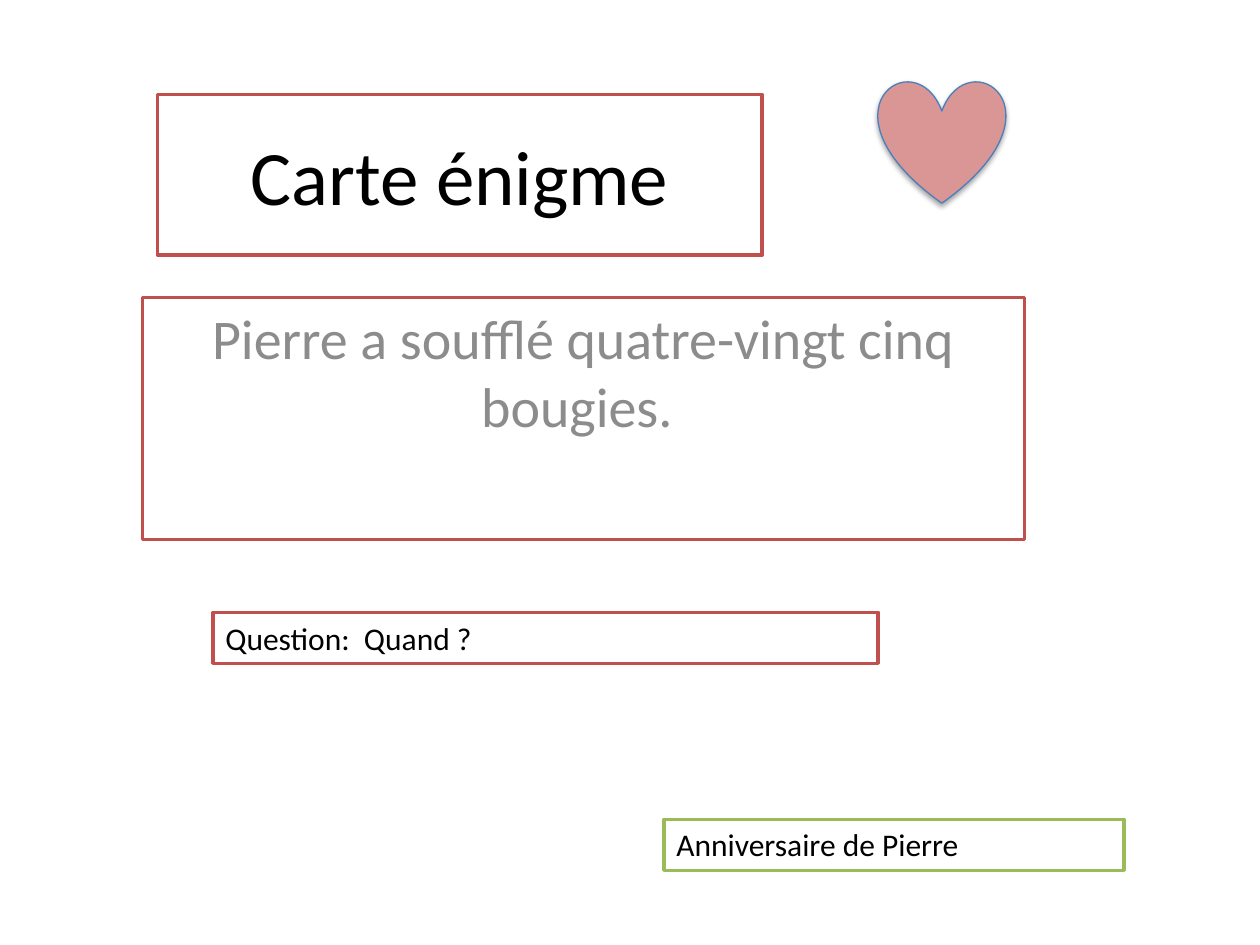
from lxml.etree import SubElement
from pptx import Presentation
from pptx.dml.color import RGBColor
from pptx.enum.shapes import MSO_SHAPE as Shape
from pptx.enum.text import MSO_ANCHOR as Anchor, PP_ALIGN as Align
from pptx.oxml.ns import qn
from pptx.util import Inches, Pt

WHITE = RGBColor(0xFF, 0xFF, 0xFF)
BLACK = RGBColor(0x00, 0x00, 0x00)
GREY = RGBColor(0x8C, 0x8C, 0x8C)
RED = RGBColor(0xC0, 0x50, 0x4D)
GREEN = RGBColor(0x9B, 0xBB, 0x59)
PINK = RGBColor(0xD9, 0x96, 0x94)
BLUE = RGBColor(0x4B, 0x7E, 0xBC)
WIDTH, HEIGHT = Inches(10), Inches(7.5)


def share(left, top, width, height):
    return (int(left * WIDTH), int(top * HEIGHT),
            int(width * WIDTH), int(height * HEIGHT))


def add_outlined(slide, kind, box, fill, line, weight):
    outlined = slide.shapes.add_shape(kind, *box)
    outlined.shadow.inherit = False
    outlined.fill.solid()
    outlined.fill.fore_color.rgb = fill
    outlined.line.color.rgb = line
    outlined.line.width = Pt(weight)
    return outlined


def write(holder, text, size=18, color=BLACK, align=Align.LEFT, anchor=Anchor.TOP):
    frame = holder.text_frame
    frame.word_wrap = True
    frame.vertical_anchor = anchor
    paragraph = frame.paragraphs[0]
    paragraph.text = text
    paragraph.alignment = align
    paragraph.font.size = Pt(size)
    paragraph.font.name = "Calibri"
    paragraph.font.color.rgb = color


def add_panel(slide, box, text, border=RED, **text_format):
    panel = add_outlined(slide, Shape.RECTANGLE, box, WHITE, border, 2)
    write(panel, text, **text_format)


def add_heart(slide, box):
    heart = add_outlined(slide, Shape.HEART, box, PINK, BLUE, 0.75)
    effects = heart._element.spPr.find(qn("a:effectLst"))
    shadow = SubElement(effects, qn("a:outerShdw"), blurRad=str(Pt(3.1)),
                        dist=str(Pt(1.8)), dir="5400000", rotWithShape="0")
    tint = SubElement(shadow, qn("a:srgbClr"), val=str(BLACK))
    SubElement(tint, qn("a:alpha"), val="35000")


def add_riddle_card(slide):
    add_panel(slide, share(0.125, 0.1, 0.48, 0.17), "Carte énigme",
              size=44, align=Align.CENTER, anchor=Anchor.MIDDLE)
    add_panel(slide, share(0.113, 0.315, 0.7, 0.256),
              "Pierre a soufflé quatre-vingt cinq bougies. ",
              size=32, color=GREY, align=Align.CENTER)
    add_panel(slide, share(0.169, 0.648, 0.528, 0.054), "Question:  Quand ?")
    add_heart(slide, share(0.697, 0.085, 0.101, 0.13))
    add_panel(slide, share(0.527, 0.867, 0.365, 0.054),
              "Anniversaire de Pierre", border=GREEN)


def main():
    deck = Presentation()
    deck.slide_width, deck.slide_height = WIDTH, HEIGHT
    add_riddle_card(deck.slides.add_slide(deck.slide_layouts[6]))
    deck.save("out.pptx")


if __name__ == "__main__":
    main()
